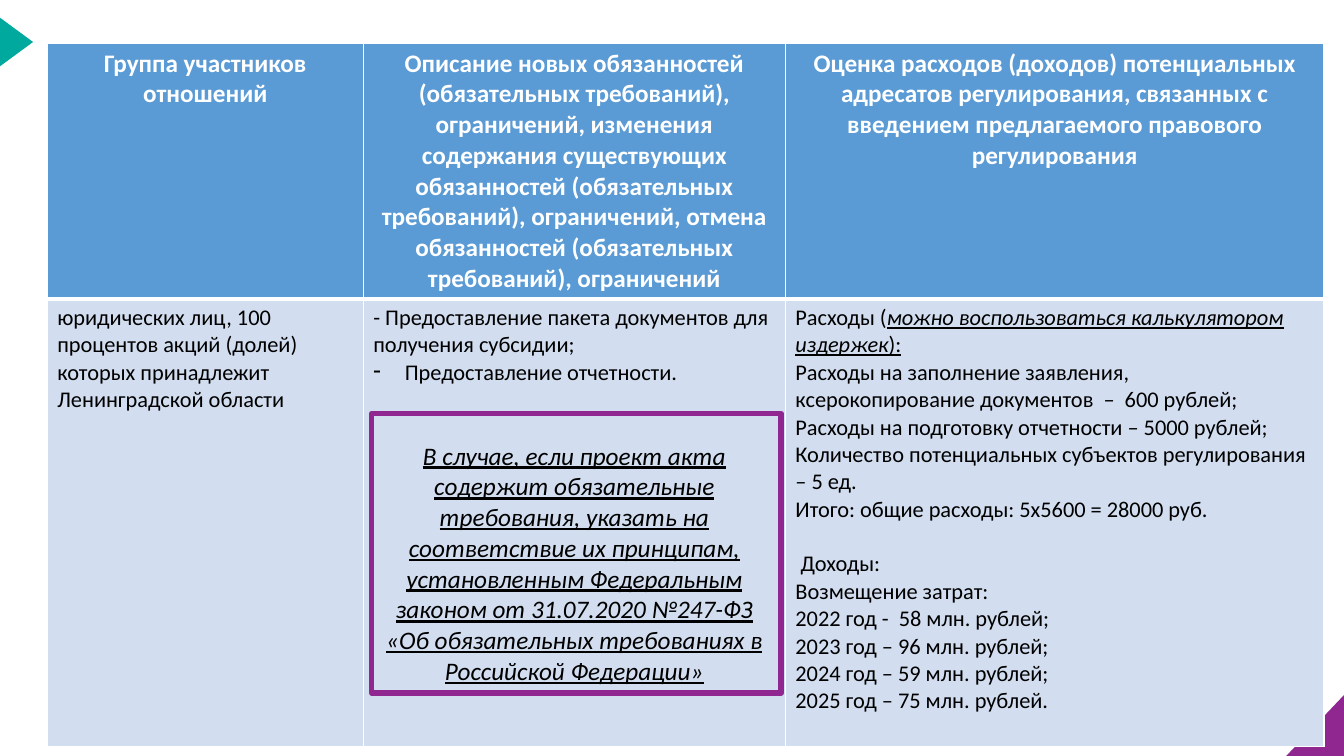
from lxml import etree
from pptx import Presentation
from pptx.dml.color import RGBColor
from pptx.enum.shapes import MSO_SHAPE
from pptx.enum.text import PP_ALIGN
from pptx.oxml.ns import qn
from pptx.util import Pt

EMU_PER_PX = 9525
CENTER, LEFT = PP_ALIGN.CENTER, PP_ALIGN.LEFT
TRIANGLE, RECTANGLE = MSO_SHAPE.ISOSCELES_TRIANGLE, MSO_SHAPE.RECTANGLE
FONT = "Calibri"
COLORS = {"teal": "00A99D", "purple": "902790", "header": "5B9BD5",
          "body": "D2DEEF", "white": "FFFFFF", "black": "000000"}

COLUMN_WIDTHS = [301, 402, 513]
ROW_HEIGHTS = [244, 426]
HEADERS = [
    "Группа участников отношений",
    "Описание новых обязанностей (обязательных требований), ограничений, "
    "изменения содержания существующих обязанностей (обязательных требований), "
    "ограничений, отмена обязанностей (обязательных требований), ограничений",
    "Оценка расходов (доходов) потенциальных адресатов регулирования, "
    "связанных с введением предлагаемого правового регулирования",
]
PARTICIPANTS = ("юридических лиц, 100 процентов акций (долей) которых "
                "принадлежит Ленинградской области")
NOTE = ("В случае, если проект акта содержит обязательные требования, указать на "
        "соответствие их принципам, установленным Федеральным законом от "
        "31.07.2020 №247-ФЗ «Об обязательных требованиях в Российской Федерации»")
EXPENSES = [
    "Расходы на заполнение заявления, ксерокопирование документов  –  600 рублей;",
    "Расходы на подготовку отчетности – 5000 рублей;",
    "Количество потенциальных субъектов регулирования – 5 ед.",
    "Итого: общие расходы: 5х5600 = 28000 руб.",
]
INCOME = [
    "Возмещение затрат:",
    "2022 год -  58 млн. рублей;",
    "2023 год – 96 млн. рублей;",
    "2024 год – 59 млн. рублей;",
    "2025 год – 75 млн. рублей.",
]


def px(length):
    return round(length * EMU_PER_PX)


def color(name):
    return RGBColor.from_string(COLORS[name])


def paint(shape, name):
    shape.shadow.inherit = False
    shape.fill.solid()
    shape.fill.fore_color.rgb = color(name)
    shape.line.fill.background()


def indent(paragraph, margin, first=0, bullet=None):
    props = paragraph._p.get_or_add_pPr()
    props.set("marL", str(px(margin)))
    props.set("indent", str(px(first)))
    if bullet:
        etree.SubElement(props, qn("a:buChar")).set("char", bullet)


def style(paragraph, size=16, ink="black", align=LEFT, before=0, bold=False):
    paragraph.alignment = align
    if before:
        paragraph.space_before = Pt(before)
    font = paragraph.font
    font.name, font.size, font.bold = FONT, Pt(size), bold
    font.color.rgb = color(ink)


def write(cell, text, **look):
    """Fill the cell's empty first paragraph, or add another one."""
    frame = cell.text_frame
    first = frame.paragraphs[0]
    paragraph = first if not first.runs else frame.add_paragraph()
    paragraph.add_run().text = text
    style(paragraph, **look)
    return paragraph


def dress_cell(cell, fill, top, bottom):
    cell.fill.solid()
    cell.fill.fore_color.rgb = color(fill)
    props = cell._tc.get_or_add_tcPr()
    sides = {"lnL": 1, "lnR": 1, "lnT": top, "lnB": bottom}
    for place, (side, width) in enumerate(sides.items()):
        border = etree.Element(qn("a:" + side), w=str(Pt(width)))
        solid = etree.SubElement(border, qn("a:solidFill"))
        etree.SubElement(solid, qn("a:srgbClr")).set("val", COLORS["white"])
        props.insert(place, border)


def add_corners(slide, width, height):
    # Teal pointer at the top left
    pointer = slide.shapes.add_shape(TRIANGLE, px(-8), px(24), px(47), px(32))
    pointer.rotation = 90
    paint(pointer, "teal")
    # Purple wedge at the bottom right
    outline = slide.shapes.build_freeform(width, height, scale=EMU_PER_PX)
    outline.add_line_segments([(width - 55, height), (width, height - 58)])
    paint(outline.convert_to_shape(), "purple")


def fill_duties(cell):
    write(cell, "- Предоставление пакета документов для получения субсидии;")
    reporting = cell.text_frame.add_paragraph()
    indent(reporting, 30, -30, "-")
    reporting.add_run().text = "Предоставление отчетности."
    style(reporting)
    note = write(cell, NOTE, size=18, align=CENTER, before=39)
    note.font.italic = note.font.underline = True


def fill_costs(cell):
    heading = write(cell, "Расходы (")
    for text, italic in [("можно воспользоваться калькулятором издержек", True),
                         ("):", False)]:
        run = heading.add_run()
        run.text = text
        run.font.italic, run.font.underline = italic, True
    for expense in EXPENSES:
        write(cell, expense)
    indent(write(cell, "Доходы:", before=19.5), 5)
    for income in INCOME:
        write(cell, income)


def add_duties_table(slide, left, top):
    table = slide.shapes.add_table(
        len(ROW_HEIGHTS), len(COLUMN_WIDTHS), px(left), px(top),
        px(sum(COLUMN_WIDTHS)), px(sum(ROW_HEIGHTS))).table
    for column, width in zip(table.columns, COLUMN_WIDTHS):
        column.width = px(width)
    for row, height in zip(table.rows, ROW_HEIGHTS):
        row.height = px(height)
    for index, header in enumerate(HEADERS):
        dress_cell(table.cell(0, index), "header", 1, 3)
        dress_cell(table.cell(1, index), "body", 3, 1)
        write(table.cell(0, index), header, size=18, ink="white",
              align=CENTER, bold=True)
    write(table.cell(1, 0), PARTICIPANTS)
    fill_duties(table.cell(1, 1))
    fill_costs(table.cell(1, 2))


def add_note_frame(slide, left, top, width, height):
    frame = slide.shapes.add_shape(RECTANGLE, px(left), px(top),
                                   px(width), px(height))
    frame.shadow.inherit = False
    frame.fill.background()
    frame.line.color.rgb = color("purple")
    frame.line.width = Pt(4)


def main():
    deck = Presentation()
    deck.slide_width, deck.slide_height = px(1280), px(720)
    slide = deck.slides.add_slide(deck.slide_layouts[6])
    add_corners(slide, 1280, 720)
    add_duties_table(slide, 45, 41)
    add_note_frame(slide, 354, 394, 390, 266)
    deck.save("out.pptx")


if __name__ == "__main__":
    main()
